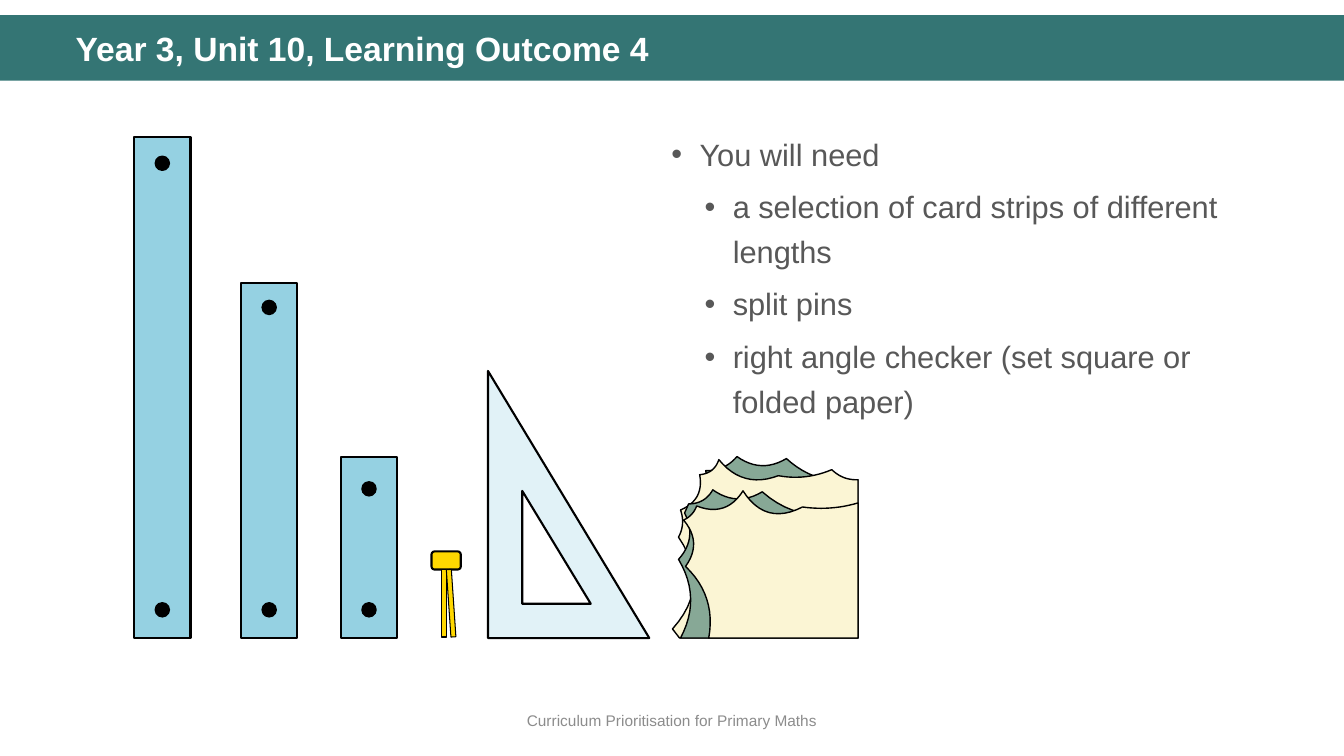
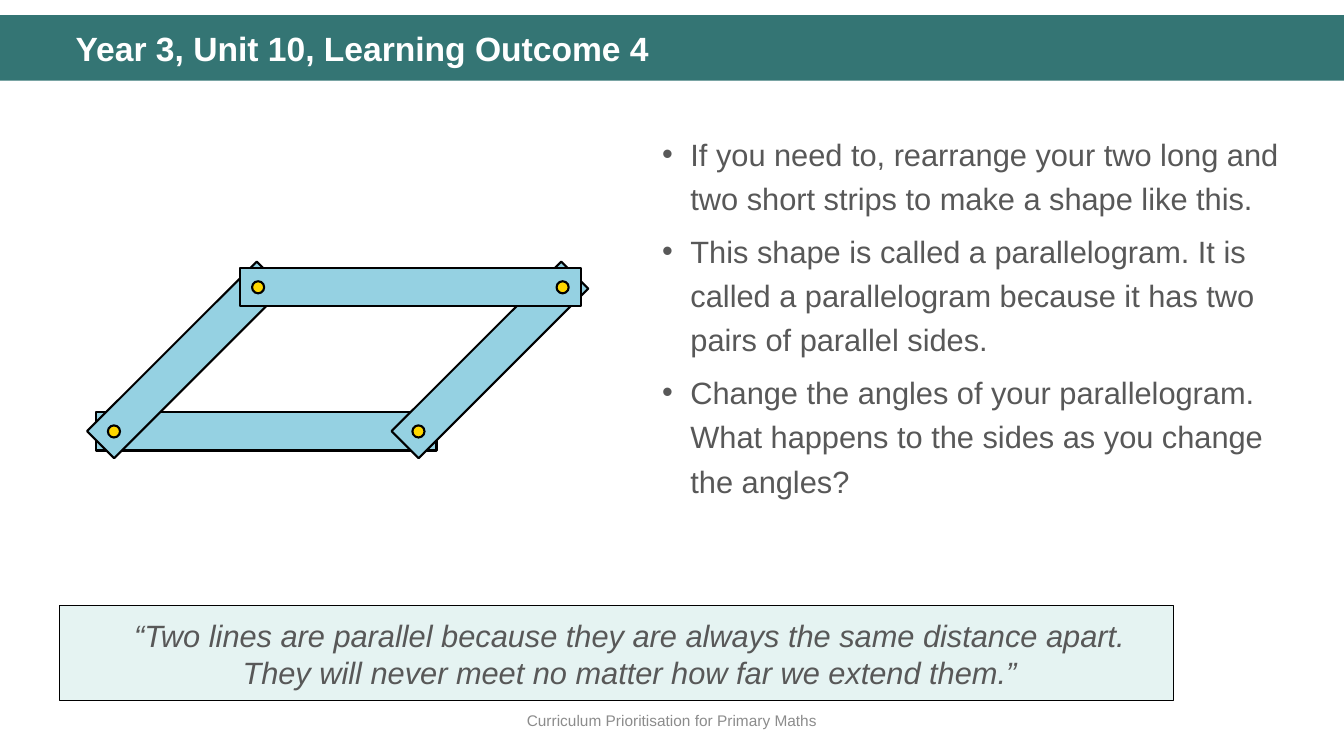
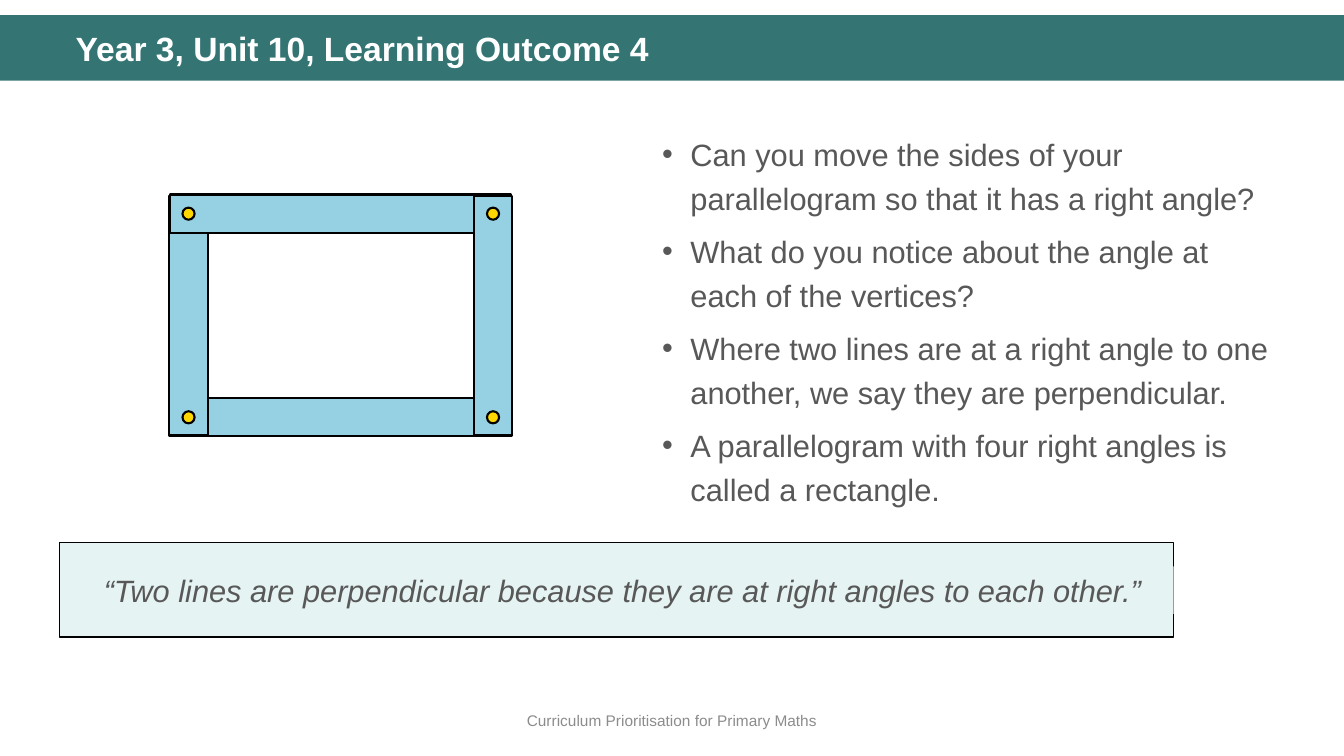
import math
from dataclasses import dataclass

from lxml import etree
from pptx import Presentation
from pptx import util as u
from pptx.dml.color import RGBColor as Rgb
from pptx.enum import shapes as es, text as et
from pptx.oxml.ns import qn


@dataclass(frozen=True)
class Theme:
    font: str = "Arial"
    band: str = "347574"
    white: str = "FFFFFF"
    grey: str = "8C8C8C"
    text: str = "585858"
    quote: str = "E5F3F2"
    card: str = "95D1E2"
    gold: str = "FFD700"
    black: str = "000000"
    glass: str = "B8E1EC"
    cream: str = "FBF5D4"
    green: str = "87A896"
    head: int = 24
    body: int = 22
    foot: int = 11
    thin: float = 0.75
    fine: float = 1
    bold: float = 1.5


T = Theme()
PX = 9144
WIDE, HIGH = 1333, 750
RECT, OVAL = es.MSO_SHAPE.RECTANGLE, es.MSO_SHAPE.OVAL
ALIGN, ANCHOR = et.PP_ALIGN, et.MSO_ANCHOR


def paint(shape, fill, line=0):
    """Fill a shape and outline it in black; a line of 0 points means none."""
    shape.shadow.inherit = False
    shape.fill.solid()
    shape.fill.fore_color.rgb = Rgb.from_string(fill)
    if line:
        shape.line.color.rgb = Rgb.from_string(T.black)
        shape.line.width = u.Pt(line)
    else:
        shape.line.fill.background()
    return shape


def box(home, kind, place, fill, line=0, turn=0):
    """Add a painted preset shape; place is left, top, width, height in px."""
    shape = home.add_shape(kind, *(round(n) * PX for n in place))
    shape.rotation = turn
    return paint(shape, fill, line)


prs = Presentation()
prs.slide_width, prs.slide_height = WIDE * PX, HIGH * PX
layout = prs.slide_layouts[5]
for holder in list(layout.placeholders)[1:]:
    layout.shapes.element.remove(holder.element)

# Each page: left and width of the body, then bullets as (level, words)
pages = [
    (656, 596, [
        (0, "You will need"),
        (1, "a selection of card strips of different lengths"),
        (1, "split pins"),
        (1, "right angle checker (set square or folded paper)")]),
    (647, 634, [
        (0, "If you need to, rearrange your two long and two short strips "
            "to make a shape like this."),
        (0, "This shape is called a parallelogram. It is called a "
            "parallelogram because it has two pairs of parallel sides."),
        (0, "Change the angles of your parallelogram. What happens to the "
            "sides as you change the angles?")]),
    (647, 634, [
        (0, "Can you move the sides of your parallelogram so that it has a "
            "right angle?"),
        (0, "What do you notice about the angle at each of the vertices?"),
        (0, "Where two lines are at a right angle to one another, we say "
            "they are perpendicular."),
        (0, "A parallelogram with four right angles is called a "
            "rectangle.")]),
]
deck = [prs.slides.add_slide(layout) for page in pages]

# The band belongs to the layout
band = box(deck[0].shapes, RECT, (0, 15, WIDE, 65), T.band)
layout.shapes.element.append(band.element)

# Paragraphs to style at the end: paragraph, size, colour, align, bold, italic
lines = []
HANG, STEP = 28, 33

for slide, (left, width, items) in zip(deck, pages):
    title = slide.shapes.title
    title.left, title.top, title.width, title.height = (
        n * PX for n in (65, 27, 1232, 47))
    frame = title.text_frame
    frame.text = "Year 3, Unit 10, Learning Outcome 4"
    frame.vertical_anchor = ANCHOR.TOP
    frame.auto_size = et.MSO_AUTO_SIZE.NONE
    frame.paragraphs[0].line_spacing = 0.9
    lines.append((frame.paragraphs[0], T.head, T.white, ALIGN.LEFT, True, False))

    foot = slide.shapes.add_textbox(0, 695 * PX, WIDE * PX, 40 * PX)
    frame = foot.text_frame
    frame.word_wrap = True
    frame.vertical_anchor = ANCHOR.MIDDLE
    frame.text = "Curriculum Prioritisation for Primary Maths"
    lines.append((frame.paragraphs[0], T.foot, T.grey, ALIGN.CENTER, False, False))

    body = slide.shapes.add_textbox(left * PX, 122 * PX, width * PX, 479 * PX)
    frame = body.text_frame
    frame.word_wrap = True
    frame.text = "\n".join(words for level, words in items)
    for i, (par, (level, words)) in enumerate(zip(frame.paragraphs, items)):
        props = par._p.get_or_add_pPr()
        props.set("marL", str((HANG + STEP * level) * PX))
        props.set("indent", str(-HANG * PX))
        tint = etree.SubElement(props, qn("a:buClr"))
        etree.SubElement(tint, qn("a:srgbClr"), val=T.text)
        etree.SubElement(props, qn("a:buFont"), typeface=T.font)
        etree.SubElement(props, qn("a:buChar"), char="•")
        par.level = level
        par.line_spacing = 1.2
        par.space_before = u.Pt(6 if i else 0)
        lines.append((par, T.body, T.text, ALIGN.LEFT, False, False))

# Slide 1: everything stands on one ground line
kit = deck[0].shapes
GROUND = 633

# Split pin: a head and two legs
pin = kit.add_group_shape().shapes
box(pin, es.MSO_SHAPE.ROUNDED_RECTANGLE, (428, 547, 29, 18), T.gold, T.bold)
for x, turn in [(438, 0), (445, 356.1)]:
    box(pin, RECT, (x, 565, 5, 67), T.gold, T.thin, turn)

# Card strips: left, height, and depth of the upper hole
CARD, HOLE = 56, 14
for x, tall, deep in [(239, 352, 17), (338, 180, 25), (133, 497, 19)]:
    strip = kit.add_group_shape().shapes
    top = GROUND - tall
    box(strip, RECT, (x, top, CARD, tall), T.card, T.bold)
    for y in (GROUND - 35, top + deep):
        box(strip, OVAL, (x + (CARD - HOLE) / 2, y, HOLE, HOLE), T.black, T.fine)

# Folded paper: four torn layers, back to front, sharing the right-hand side.
# A torn edge runs from top right to bottom left through sharp tips; each tip
# is (x, y, sag), where sag is how far the tear before it cuts into the paper.
EDGE, STEPS = 851, 12
layers = [
    (T.green, [(EDGE, 476, 0), (780, 455, 9), (731, 453, 8), (700, 467, 4),
               (683, 505, 7), (700, 562, 12), (694, 612, 4),
               (703, GROUND, 0)]),
    (T.cream, [(EDGE, 476, 0), (825, 466, 3), (772, 472, 4), (713, 456, 11),
               (694, 471, 4), (675, 506, 8), (673, 533, 3), (667, 624, 18),
               (674, GROUND, 0)]),
    (T.green, [(EDGE, 500, 0), (756, 488, 16), (707, 486, 8), (683, 500, 4),
               (679, 509, 0), (673, 555, 8), (675, GROUND, 11)]),
    (T.cream, [(EDGE, 499, 0), (796, 503, 3), (737, 487, 14), (691, 502, 10),
               (678, 516, 2), (680, 562, 9), (703, GROUND, 10)]),
]
paper = kit.add_group_shape().shapes
for fill, tips in layers:
    edge = [tips[0][:2]]
    for (x, y, _), (tip_x, tip_y, sag) in zip(tips, tips[1:]):
        dx, dy = tip_x - x, tip_y - y
        span = math.hypot(dx, dy)
        for t in (k / STEPS for k in range(1, STEPS + 1)):
            bend = 4 * t * (1 - t) * sag / span
            edge.append((x + dx * t + dy * bend, y + dy * t - dx * bend))
    pen = paper.build_freeform(EDGE, GROUND, scale=PX / 10)
    pen = paper.build_freeform(EDGE * PX, GROUND * PX)
    pen.add_line_segments([(x * PX, y * PX) for x, y in edge], close=True)
    paint(pen.convert_to_shape(), fill, T.fine)

# Set square: a see-through right triangle with a triangular window
pen = kit.build_freeform(484, 368, scale=PX)
pen.add_line_segments([(644, GROUND), (484, GROUND)], close=True)
pen.move_to(518, 487)
pen.add_line_segments([(518, 599), (586, 599)], close=True)
square = paint(pen.convert_to_shape(), T.glass, T.bold)
tint = square.element.spPr.find(qn("a:solidFill"))[0]
etree.SubElement(tint, qn("a:alpha"), val="41000")

# Slides 2 and 3: a quote panel and a model of four strips pinned at corners.
# LONG and SHORT run from pin to pin; each strip reaches past both pins.
LONG, SHORT, PAST, BAR, PIN = 302, 202, 18, 38, 12
models = [
    (deck[1], 601, (119, 607, 1011, 84),
     "“Two lines are parallel because they are always the same distance "
     "apart. They will never meet no matter how far we extend them.”",
     (113, 428), 45, ("base", "left", "right", "top")),
    (deck[2], 538, (71, 562, 1093, 47),
     "“Two lines are perpendicular because they are at right angles to "
     "each other.”",
     (187, 414), 90, ("base", "left", "top", "right")),
]
for slide, top, place, words, (x, y), lean, order in models:
    box(slide.shapes, RECT, (59, top, 1105, 94), T.quote, T.fine)
    frame = box(slide.shapes, RECT, place, T.quote).text_frame
    frame.word_wrap = True
    frame.vertical_anchor = ANCHOR.TOP
    frame.text = words
    lines.append((frame.paragraphs[0], T.body, T.text, ALIGN.CENTER, False, True))

    over = SHORT * math.cos(math.radians(lean))
    rise = SHORT * math.sin(math.radians(lean))
    low, high = (x, y), (x + over, y - rise)
    far_low, far_high = (x + LONG, y), (x + LONG + over, y - rise)
    sides = {"base": (low, far_low), "left": (low, high),
             "right": (far_low, far_high), "top": (high, far_high)}
    model = slide.shapes.add_group_shape().shapes
    for side in order:
        (x1, y1), (x2, y2) = sides[side]
        size = math.dist((x1, y1), (x2, y2)) + 2 * PAST
        turn = math.degrees(math.atan2(y2 - y1, x2 - x1))
        spot = ((x1 + x2 - size) / 2, (y1 + y2 - BAR) / 2, size, BAR)
        box(model, RECT, spot, T.card, T.bold, turn)
    for cx, cy in (low, high, far_high, far_low):
        box(model, OVAL, (cx - PIN / 2, cy - PIN / 2, PIN, PIN), T.gold, T.bold)

for par, size, color, align, bold, italic in lines:
    par.alignment = align
    for run in par.runs:
        font = run.font
        font.name, font.size = T.font, u.Pt(size)
        font.bold, font.italic = bold, italic
        font.color.rgb = Rgb.from_string(color)

prs.save("out.pptx")
